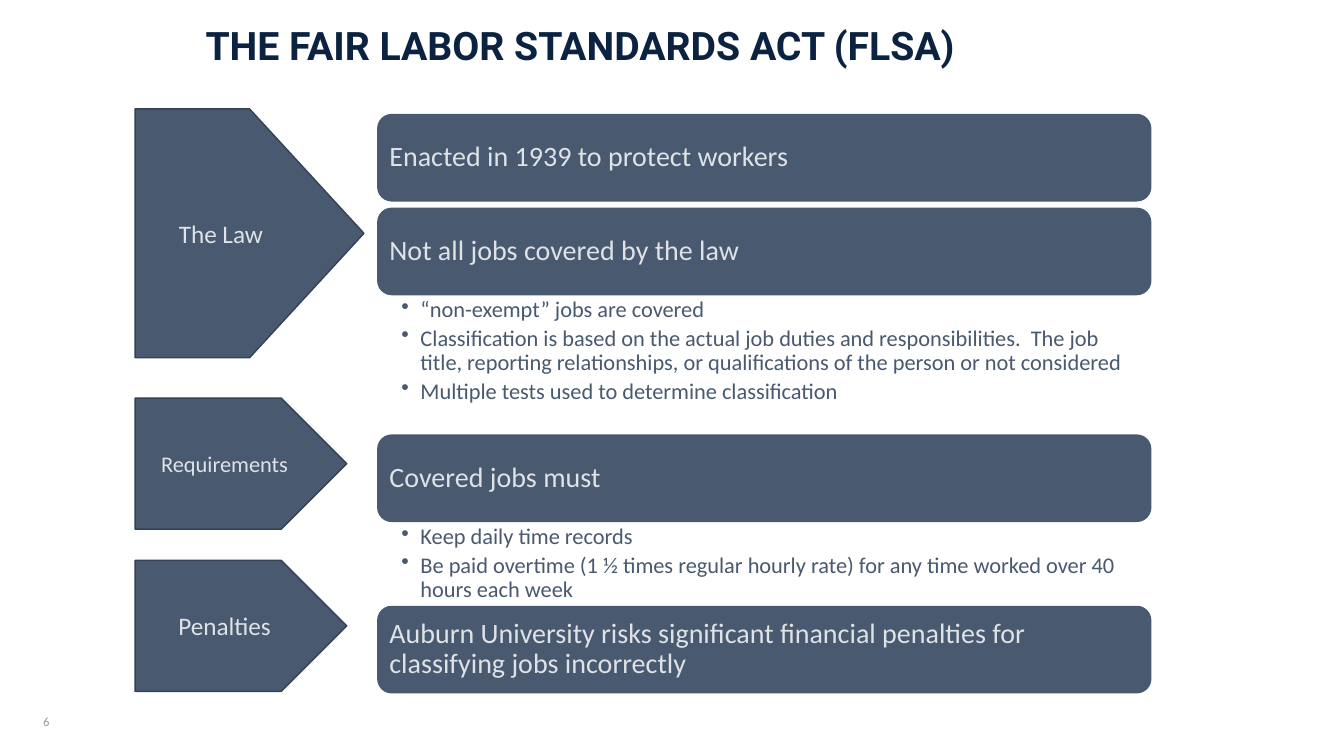
from dataclasses import dataclass

import pptx
import pptx.dml.color
import pptx.enum.shapes
import pptx.enum.text
import pptx.oxml
import pptx.oxml.ns
import pptx.util
from pptx.util import Inches

COLORS = {
    "navy": "0B2341",
    "slate": "485970",
    "outline": "354253",
    "pale": "DFE2E6",
    "gray": "999999",
}
ARROW_LEFT = 1.34
CARD_LEFT, CARD_WIDTH, CARD_HEIGHT = 3.74, 7.68, 0.87
BULLET_INDENT = 0.19

SHAPE = pptx.enum.shapes.MSO_SHAPE
ANCHOR = pptx.enum.text.MSO_ANCHOR
ALIGN = pptx.enum.text.PP_ALIGN


@dataclass
class Arrow:
    text: str
    top: float
    width: float
    height: float
    size: int


@dataclass
class Card:
    heading: str
    top: float
    bullets: tuple[str, ...] = ()
    bullets_height: float = 0


ARROWS = [
    Arrow("The Law", 1.08, 2.27, 2.47, 18),
    Arrow("Requirements", 3.95, 2.1, 1.3, 16),
    Arrow("Penalties", 5.56, 2.1, 1.3, 18),
]
CARDS = [
    Card("Enacted in 1939 to protect workers", 1.13),
    Card("Not all jobs covered by the law", 2.06, (
        "“non-exempt” jobs are covered",
        "Classification is based on the actual job duties and responsibilities.  The job title, "
        "reporting relationships, or qualifications of the person or not considered",
        "Multiple tests used to determine classification",
    ), 1.38),
    Card("Covered jobs must", 4.31, (
        "Keep daily time records",
        "Be paid overtime (1 ½ times regular hourly rate) for any time worked over 40 hours each week",
    ), 0.84),
    Card("Auburn University risks significant financial penalties for classifying jobs incorrectly", 6.01),
]


def rgb(name: str) -> pptx.dml.color.RGBColor:
    return pptx.dml.color.RGBColor.from_string(COLORS[name])


def style_runs(paragraph, size: int, color: str, font: str = "Calibri", bold: bool = False) -> None:
    for run in paragraph.runs:
        run.font.size = pptx.util.Pt(size)
        run.font.name = font
        run.font.bold = bold
        run.font.color.rgb = rgb(color)


def set_margins(text_frame, left: float, top: float, right: float, bottom: float) -> None:
    text_frame.margin_left, text_frame.margin_top = Inches(left), Inches(top)
    text_frame.margin_right, text_frame.margin_bottom = Inches(right), Inches(bottom)


def add_text(slide, left: float, top: float, width: float, height: float, text: str):
    box = slide.shapes.add_textbox(Inches(left), Inches(top), Inches(width), Inches(height))
    text_frame = box.text_frame
    text_frame.word_wrap = True
    text_frame.text = text
    return text_frame


def add_block(slide, kind, left: float, top: float, width: float, height: float,
              text: str, size: int, align):
    shape = slide.shapes.add_shape(kind, Inches(left), Inches(top), Inches(width), Inches(height))
    shape.shadow.inherit = False
    shape.fill.solid()
    shape.fill.fore_color.rgb = rgb("slate")
    shape.line.fill.background()
    text_frame = shape.text_frame
    text_frame.word_wrap = True
    text_frame.vertical_anchor = ANCHOR.MIDDLE
    text_frame.text = text
    text_frame.paragraphs[0].alignment = align
    style_runs(text_frame.paragraphs[0], size, "pale")
    return shape


def add_arrow(slide, arrow: Arrow) -> None:
    shape = add_block(slide, SHAPE.PENTAGON, ARROW_LEFT, arrow.top, arrow.width, arrow.height,
                      arrow.text, arrow.size, ALIGN.CENTER)
    shape.line.color.rgb = rgb("outline")
    shape.line.width = pptx.util.Pt(1)


def add_bullets(slide, card: Card) -> None:
    text_frame = add_text(slide, CARD_LEFT, card.top + CARD_HEIGHT, CARD_WIDTH,
                          card.bullets_height, "\n".join(card.bullets))
    set_margins(text_frame, 0.24, 0.03, 0.16, 0.03)
    for paragraph in text_frame.paragraphs:
        paragraph.level = 1
        paragraph.line_spacing = 0.9
        paragraph.space_after = pptx.util.Pt(3.2)
        properties = paragraph._p.get_or_add_pPr()
        properties.set("marL", str(Inches(BULLET_INDENT)))
        properties.set("indent", str(-Inches(BULLET_INDENT)))
        bullet = pptx.oxml.parse_xml(f'<a:buChar {pptx.oxml.ns.nsdecls("a")} char="•"/>')
        properties.append(bullet)
        style_runs(paragraph, 16, "slate")


def add_card(slide, card: Card) -> None:
    shape = add_block(slide, SHAPE.ROUNDED_RECTANGLE, CARD_LEFT, card.top, CARD_WIDTH, CARD_HEIGHT,
                      card.heading, 20, ALIGN.LEFT)
    set_margins(shape.text_frame, 0.08, 0.08, 0.08, 0.08)
    shape.text_frame.paragraphs[0].line_spacing = 0.9
    if card.bullets:
        add_bullets(slide, card)


def main() -> None:
    presentation = pptx.Presentation()
    presentation.slide_width, presentation.slide_height = Inches(13.33), Inches(7.5)
    slide = presentation.slides.add_slide(presentation.slide_layouts[6])

    # Page number and title
    number = add_text(slide, 0.33, 6.96, 0.35, 0.4, "6")
    number.vertical_anchor = ANCHOR.MIDDLE
    style_runs(number.paragraphs[0], 9, "gray")
    title = add_text(slide, 1.94, 0.25, 10.93, 0.73, "THE FAIR LABOR STANDARDS ACT (FLSA)")
    title.paragraphs[0].line_spacing = 0.8
    style_runs(title.paragraphs[0], 28, "navy", "Roboto", bold=True)

    # Cards with their bullet lists
    for card in CARDS:
        add_card(slide, card)

    # Topic arrows
    for arrow in ARROWS:
        add_arrow(slide, arrow)

    presentation.save("out.pptx")


if __name__ == "__main__":
    main()
